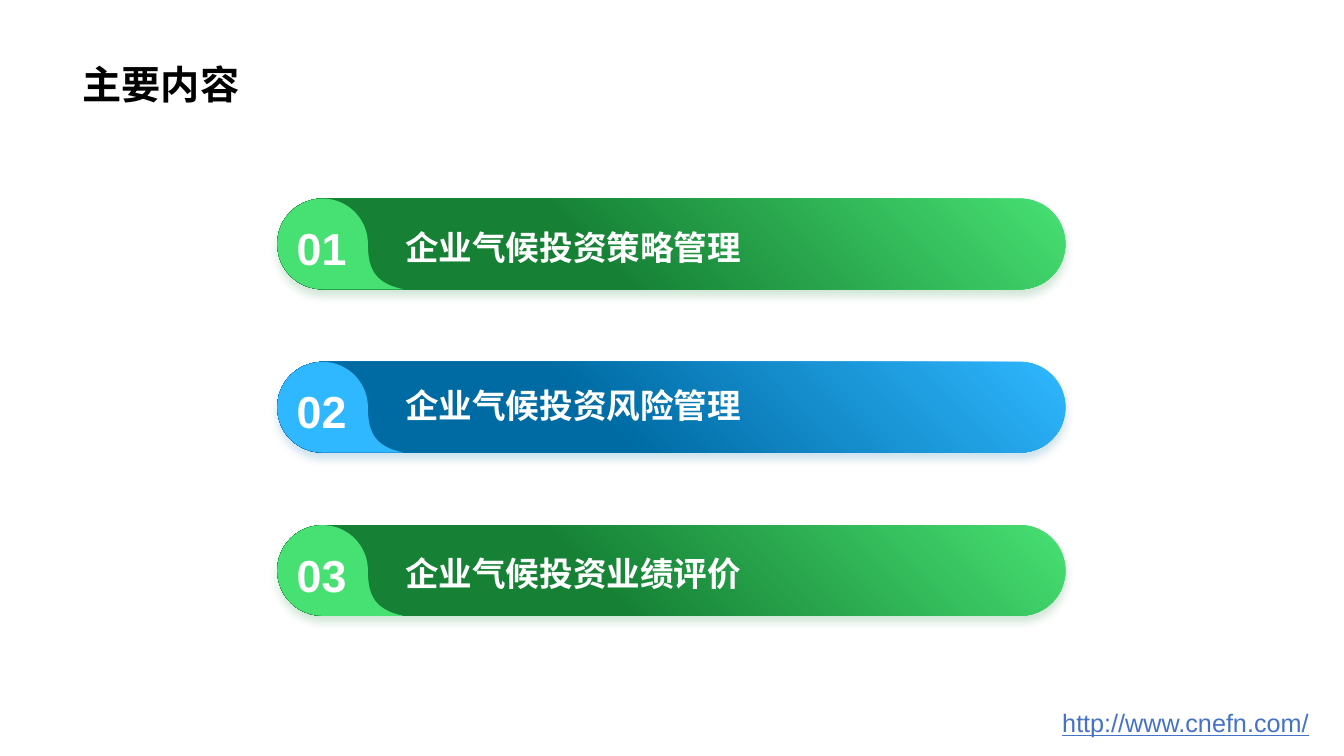
from dataclasses import dataclass
from math import cos, radians, sin

from lxml import etree
from pptx import Presentation
from pptx.dml.color import RGBColor
from pptx.enum.shapes import MSO_SHAPE
from pptx.enum.text import MSO_ANCHOR, MSO_AUTO_SIZE, PP_ALIGN
from pptx.oxml.ns import qn
from pptx.shapes.autoshape import Shape
from pptx.shapes.shapetree import SlideShapes
from pptx.util import Emu, Inches, Pt

PILL = MSO_SHAPE.ROUNDED_RECTANGLE
BOTTOM, TOP = MSO_ANCHOR.BOTTOM, MSO_ANCHOR.TOP
LEFT, CENTER = PP_ALIGN.LEFT, PP_ALIGN.CENTER
NO_FIT = MSO_AUTO_SIZE.NONE

COLS, ROWS = 160, 90
WIDE, HIGH = Inches(13.3333), Inches(7.5)
UNIT = HIGH / ROWS


@dataclass(frozen=True)
class Theme:
    face: str = "Arial"
    ink: str = "000000"
    white: str = "FFFFFF"
    link: str = "4472C4"
    lime: str = "47E073"
    green: str = "168135"
    sky: str = "2FB7FF"
    blue: str = "006BA3"
    title: int = 28
    label: int = 24
    number: int = 32
    foot: int = 18


@dataclass(frozen=True)
class Box:
    col: float
    row: float
    cols: float
    rows: float

    def emu(self) -> list[Emu]:
        return [Emu(round(n * UNIT)) for n in (self.col, self.row, self.cols, self.rows)]


@dataclass(frozen=True)
class Topic:
    text: str
    light: str
    dark: str
    drop: float


THEME = Theme()
BAR = Box(33, 23.64, 93.84, 10.8)
PITCH = 19.44
TOPICS = [
    Topic("企业气候投资策略管理", THEME.lime, THEME.green, 2.76),
    Topic("企业气候投资风险管理", THEME.sky, THEME.blue, 2.16),
    Topic("企业气候投资业绩评价", THEME.lime, THEME.green, 2.76),
]


def write(shape: Shape, text: str, size: int, color: str, align: PP_ALIGN = LEFT,
          anchor: MSO_ANCHOR = TOP, wrap: bool = True, **style: bool) -> None:
    frame = shape.text_frame
    look = {"auto_size": NO_FIT, "word_wrap": wrap, "vertical_anchor": anchor, "text": text}
    for name, value in look.items():
        setattr(frame, name, value)
    line = frame.paragraphs[0]
    line.alignment = align
    font = line.runs[0].font
    for name, value in {"name": THEME.face, "size": Pt(size), **style}.items():
        setattr(font, name, value)
    font.color.rgb = RGBColor.from_string(color)


def shade(shape: Shape, color: str) -> None:
    shape.shadow.inherit = False
    effects = shape._element.spPr.find(qn("a:effectLst"))
    drop = etree.SubElement(effects, qn("a:outerShdw"), blurRad=str(Pt(6)),
                            dist=str(Pt(4)), dir="5400000", algn="t", rotWithShape="0")
    tint = etree.SubElement(drop, qn("a:srgbClr"), val=color)
    etree.SubElement(tint, qn("a:alpha"), val="20000")


def draw_bar(shapes: SlideShapes, box: Box, topic: Topic) -> None:
    bar = shapes.add_shape(PILL, *box.emu())
    bar.adjustments[0] = 0.5
    bar.line.fill.background()
    bar.fill.gradient()
    bar.fill.gradient_angle = 225
    stops = zip(bar.fill.gradient_stops, (0, 0.6), (topic.light, topic.dark))
    for stop, place, color in stops:
        stop.position = place
        stop.color.rgb = RGBColor.from_string(color)
    shade(bar, topic.dark)


def draw_tab(shapes: SlideShapes, box: Box, color: str) -> None:
    size = box.rows
    half = size / 2
    arc = [(half + half * cos(radians(a)), half + half * sin(radians(a)))
           for a in range(90, 361, 5)]
    pulls = [(size, half), (size, 8.4), (11.64, 10.08), (15, size)]
    curve = []
    for step in range(1, 21):
        t = step / 20
        parts = ((1 - t) ** 3, 3 * t * (1 - t) ** 2, 3 * t * t * (1 - t), t ** 3)
        curve.append(tuple(sum(k * p[axis] for k, p in zip(parts, pulls)) for axis in (0, 1)))
    points = [(round((box.col + x) * UNIT), round((box.row + y) * UNIT)) for x, y in arc + curve]
    pen = shapes.build_freeform(*points[0])
    pen.add_line_segments(points[1:], close=True)
    tab = pen.convert_to_shape()
    tab.shadow.inherit = False
    tab.fill.solid()
    tab.fill.fore_color.rgb = RGBColor.from_string(color)
    tab.line.fill.background()


def draw_topic(shapes: SlideShapes, index: int, topic: Topic) -> None:
    row = BAR.row + index * PITCH
    box = Box(BAR.col, row, BAR.cols, BAR.rows)
    draw_bar(shapes, box, topic)
    draw_tab(shapes, box, topic.light)
    label = shapes.add_textbox(*Box(47.04, row + topic.drop, 68, 6).emu())
    write(label, topic.text, THEME.label, THEME.white, bold=True)
    number = shapes.add_textbox(*Box(34.08, row + 2.04, 8.4, 7.68).emu())
    write(number, f"{index + 1:02}", THEME.number, THEME.white, CENTER, wrap=False, bold=True)


def main() -> None:
    deck = Presentation()
    deck.slide_width, deck.slide_height = WIDE, HIGH
    slide = deck.slides.add_slide(deck.slide_layouts[5])
    shapes = slide.shapes
    title = shapes.title
    title.left, title.top, title.width, title.height = Box(8.64, 0, 142.56, 13.44).emu()
    write(title, "主要内容", THEME.title, THEME.ink, anchor=BOTTOM, bold=True)
    title.text_frame.paragraphs[0].line_spacing = 0.9
    for index, topic in enumerate(TOPICS):
        draw_topic(shapes, index, topic)
    foot = shapes.add_textbox(*Box(125.28, 83.64, 32.88, 4.8).emu())
    write(foot, "http://www.cnefn.com/", THEME.foot, THEME.link, wrap=False, underline=True)
    deck.save("out.pptx")


if __name__ == "__main__":
    main()
